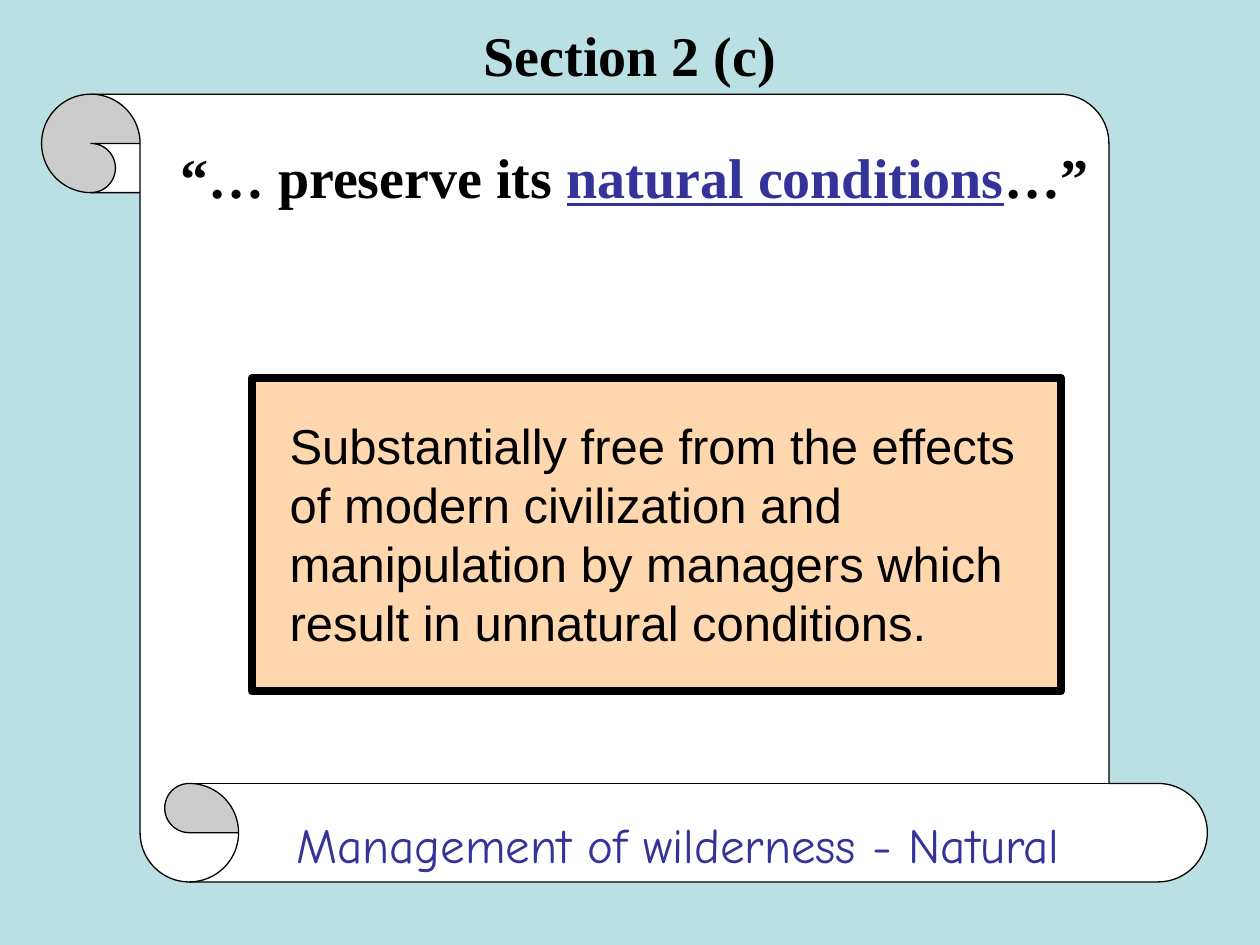
from pptx import Presentation
from pptx import util as u
from pptx.dml.color import RGBColor
from pptx.enum import shapes, text

PALE_TEAL = RGBColor(0xBB, 0xE0, 0xE3)
WHITE = RGBColor(0xFF, 0xFF, 0xFF)
BLACK = RGBColor(0, 0, 0)
INDIGO = RGBColor(0x33, 0x33, 0x99)
PEACH = RGBColor(0xFF, 0xD7, 0xAF)


def set_font(font, name, size, color, bold=False):
    font.name, font.size, font.bold = name, u.Pt(size), bold
    font.color.rgb = color


def add_panel(slide, preset, box, fill, line_width):
    shape = slide.shapes.add_shape(preset, *map(u.Cm, box))
    shape.shadow.inherit = False
    shape.fill.solid()
    shape.fill.fore_color.rgb = fill
    shape.line.color.rgb = BLACK
    shape.line.width = u.Pt(line_width)
    return shape


def add_text(slide, box, runs, name, size, color, bold=False):
    """Place one paragraph and return it; runs are plain strings."""
    frame = slide.shapes.add_textbox(*map(u.Cm, box)).text_frame
    frame.word_wrap = True
    paragraph = frame.paragraphs[0]
    set_font(paragraph.font, name, size, color, bold)
    for words in runs:
        paragraph.add_run().text = words
    return paragraph


def add_title(slide, box):
    left, top, width, height = box
    # A single 32 pt line centred in the title band
    line_height = 1.75
    line_box = (left, top + (height - line_height) / 2, width, line_height)
    paragraph = add_text(slide, line_box, ["Section 2 (c)"],
                         "Times New Roman", 32, BLACK, bold=True)
    paragraph.alignment = text.PP_ALIGN.CENTER


def add_definition(slide, box):
    shape = add_panel(slide, shapes.MSO_SHAPE.RECTANGLE, box, PEACH, 4.5)
    frame = shape.text_frame
    frame.word_wrap = True
    frame.vertical_anchor = text.MSO_ANCHOR.TOP
    frame.margin_left = frame.margin_right = u.Cm(0.76)
    frame.margin_top = frame.margin_bottom = u.Cm(0.76)
    paragraph = frame.paragraphs[0]
    paragraph.alignment = text.PP_ALIGN.LEFT
    paragraph.text = ("Substantially free from the effects of modern civilization "
                      "and manipulation by managers which result in unnatural "
                      "conditions.")
    set_font(paragraph.font, "Arial", 28, BLACK)


def add_scroll(slide, box):
    left, top, width, height = box
    scroll = add_panel(slide, shapes.MSO_SHAPE.VERTICAL_SCROLL, box, WHITE, 0.75)
    scroll.adjustments[0] = 0.125
    scroll._element.spPr.xfrm.set("flipV", "1")

    # Quotation with its key phrase underlined
    quote = add_text(slide, (left + 2.54, top + 0.84, 18.85, 1.6),
                     ["“… preserve its ", "natural conditions", "…”"],
                     "Times New Roman", 32, BLACK, bold=True)
    key_phrase = quote.runs[1].font
    key_phrase.underline = True
    key_phrase.color.rgb = INDIGO

    add_definition(slide, (left + 4.24, top + 5.72, 16.31, 6.32))

    # Caption on the lower roll
    add_text(slide, (left + 4.88, top + 14.4, 17.35, 1.45),
             ["Management of wilderness - Natural"], "Comic Neue", 28, INDIGO)


def main():
    presentation = Presentation()
    presentation.slide_width, presentation.slide_height = u.Cm(25.4), u.Cm(19.05)
    slide = presentation.slides.add_slide(presentation.slide_layouts[6])
    slide.background.fill.solid()
    slide.background.fill.fore_color.rgb = PALE_TEAL

    add_scroll(slide, (0.84, 1.9, 23.5, 15.88))
    add_title(slide, (0, 0, 25.4, 2.34))
    presentation.save("out.pptx")


if __name__ == "__main__":
    main()
